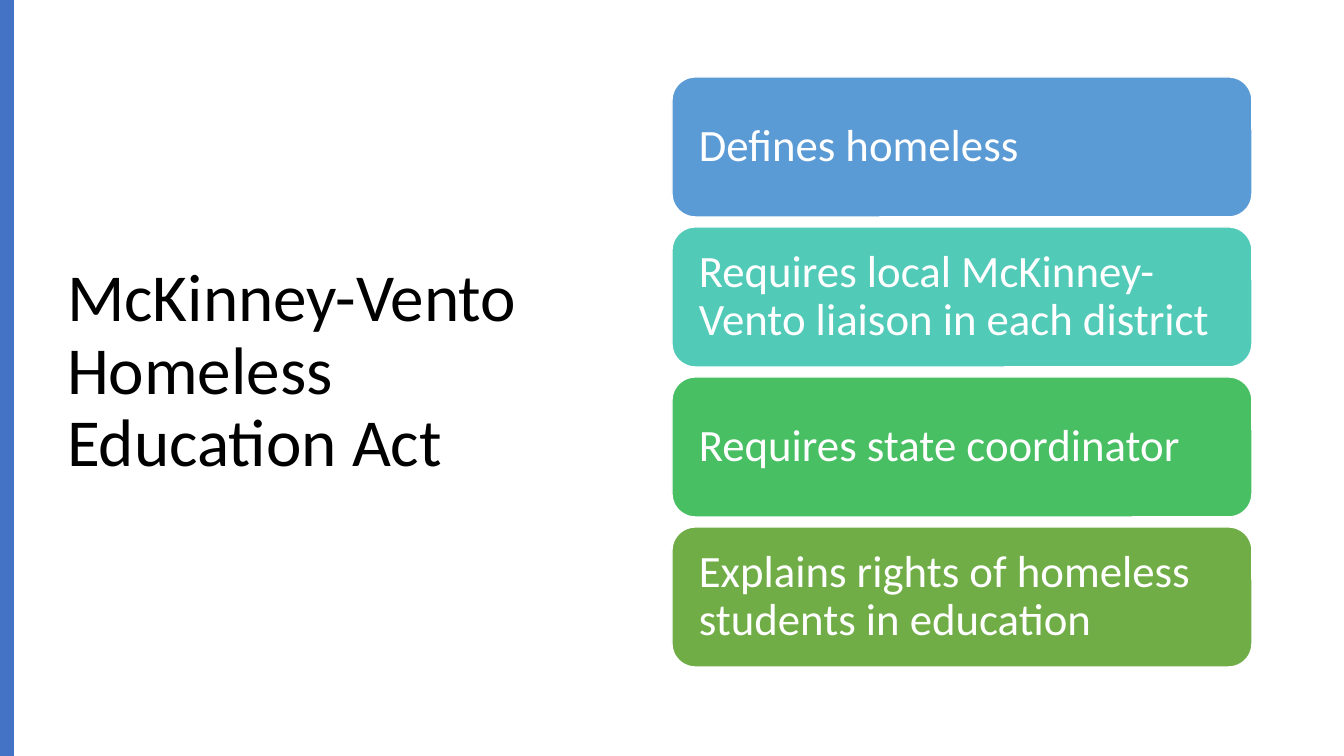
from pptx import Presentation
from pptx import util as u
from pptx.dml import color
from pptx.enum import shapes, text

PX = 914400 / 100.8


def px(length):
    return u.Emu(round(length * PX))


def paint(target, value):
    target.solid()
    target.fore_color.rgb = color.RGBColor.from_string(value)


presentation = Presentation()
presentation.slide_width = px(1344)
presentation.slide_height = px(756)
slide = presentation.slides.add_slide(presentation.slide_layouts[5])

title = slide.shapes.title
title.left, title.top, title.width, title.height = px(57), px(69), px(572), px(607)
title.text_frame.text = "McKinney-Vento Homeless Education Act"
title.text_frame.margin_right = px(20)

bar = slide.shapes.add_shape(shapes.MSO_SHAPE.RECTANGLE, 0, 0, px(14), px(756))
bar.shadow.inherit = False
paint(bar.fill, "4472C4")
bar.line.fill.background()

styled = [(title, 48, "000000")]
cards = [
    ("Defines homeless", "5B9BD5"),
    ("Requires local McKinney-Vento liaison in each district", "52CAB8"),
    ("Requires state coordinator", "49BF64"),
    ("Explains rights of homeless students in education", "70AD47"),
]
for row, (wording, fill) in enumerate(cards):
    card = slide.shapes.add_shape(
        shapes.MSO_SHAPE.ROUNDED_RECTANGLE, px(672), px(77 + 150 * row), px(580), px(140)
    )
    card.shadow.inherit = False
    paint(card.fill, fill)
    paint(card.line.fill, "FFFFFF")
    card.line.width = u.Pt(1)
    frame = card.text_frame
    frame.text = wording
    frame.margin_left = frame.margin_right = px(20)
    frame.margin_top = frame.margin_bottom = px(13)
    styled.append((card, 32, "FFFFFF"))

for shape, size, ink in styled:
    frame = shape.text_frame
    frame.word_wrap = True
    frame.auto_size = text.MSO_AUTO_SIZE.NONE
    frame.vertical_anchor = text.MSO_ANCHOR.MIDDLE
    paragraph = frame.paragraphs[0]
    paragraph.alignment = text.PP_ALIGN.LEFT
    paragraph.line_spacing = 0.9
    paragraph.font.name = "Calibri"
    paragraph.font.size = u.Pt(size)
    paint(paragraph.font.fill, ink)

presentation.save("out.pptx")
